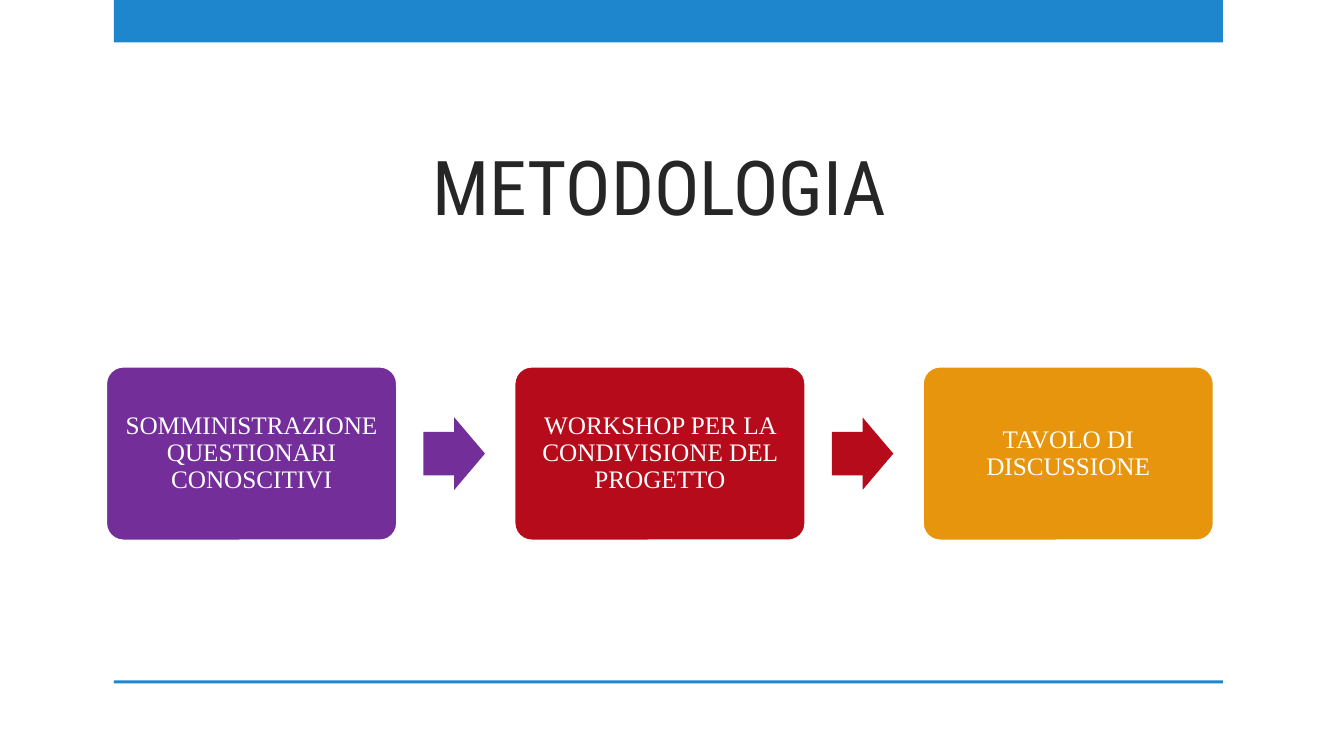
"""Build the METODOLOGIA slide: three process steps joined by block arrows."""
from dataclasses import dataclass

from pptx import Presentation
from pptx import util as u
from pptx.dml import color
from pptx.enum import shapes, text

COLOURS = {
    "blue": "1D86CD",
    "ink": "262626",
    "white": "FFFFFF",
    "purple": "732E9A",
    "red": "B50B1B",
    "orange": "E8950E",
}
SLIDE_WIDTH, SLIDE_HEIGHT = 13.33, 7.5
BAND_LEFT, CONTENT_WIDTH = 1.13, 11
STEP_LEFT, STEP_PITCH = 1.05, 4.05
STEP_WIDTH, STEP_HEIGHT = 2.89, 1.73
ARROW_OFFSET, ARROW_WIDTH, ARROW_HEIGHT = 3.15, 0.61, 0.72
ROW_MIDDLE = 4.5


@dataclass(frozen=True)
class Area:
    """A rectangle in inches."""

    left: float
    top: float
    width: float
    height: float

    def lengths(self) -> tuple:
        """Return left, top, width and height as slide lengths."""
        return tuple(u.Inches(n) for n in (self.left, self.top, self.width, self.height))


@dataclass(frozen=True)
class Step:
    """One stage of the method."""

    label: str
    colour: str


STEPS = (
    Step("SOMMINISTRAZIONE QUESTIONARI CONOSCITIVI", "purple"),
    Step("WORKSHOP PER LA CONDIVISIONE DEL PROGETTO", "red"),
    Step("TAVOLO DI DISCUSSIONE", "orange"),
)
BANDS = (
    Area(BAND_LEFT, 0, CONTENT_WIDTH, 0.42),
    Area(BAND_LEFT, 6.75, CONTENT_WIDTH, 0.03),
)
TITLE_AREA = Area(1.04, 1.27, CONTENT_WIDTH, 1.09)


def rgb(name: str) -> color.RGBColor:
    """Return a named colour of the slide."""
    return color.RGBColor.from_string(COLOURS[name])


def add_block(page, kind, area: Area, fill: str, adjustments=(), outline: str = ""):
    """Draw a filled preset shape, with a border if an outline colour is given."""
    block = page.shapes.add_shape(kind, *area.lengths())
    block.shadow.inherit = False
    block.fill.solid()
    block.fill.fore_color.rgb = rgb(fill)
    for index, value in enumerate(adjustments):
        block.adjustments[index] = value
    if outline:
        block.line.color.rgb = rgb(outline)
        block.line.width = u.Pt(1.75)
    else:
        block.line.fill.background()
    return block


def write(box, words: str, *, font: str, size: float, colour: str,
          anchor, inset: float, spacing: float = 1.0) -> None:
    """Put centred, wrapped text into a box."""
    frame = box.text_frame
    frame.word_wrap = True
    frame.vertical_anchor = anchor
    frame.margin_left = frame.margin_right = u.Inches(inset)
    frame.margin_top = frame.margin_bottom = u.Inches(0.07)
    para = frame.paragraphs[0]
    para.alignment = text.PP_ALIGN.CENTER
    para.line_spacing = spacing
    span = para.add_run()
    span.text = words
    span.font.name = font
    span.font.size = u.Pt(size)
    span.font.color.rgb = rgb(colour)


def add_step(page, step: Step, column: int) -> None:
    """Draw a step box and, unless it is the last, the arrow after it."""
    left = STEP_LEFT + column * STEP_PITCH
    area = Area(left, ROW_MIDDLE - STEP_HEIGHT / 2, STEP_WIDTH, STEP_HEIGHT)
    box = add_block(page, shapes.MSO_SHAPE.ROUNDED_RECTANGLE, area, step.colour,
                    (0.1,), outline="white")
    write(box, step.label, font="Times New Roman", size=18, colour="white",
          anchor=text.MSO_ANCHOR.MIDDLE, inset=0.07, spacing=0.9)
    if column < len(STEPS) - 1:
        area = Area(left + ARROW_OFFSET, ROW_MIDDLE - ARROW_HEIGHT / 2,
                    ARROW_WIDTH, ARROW_HEIGHT)
        add_block(page, shapes.MSO_SHAPE.RIGHT_ARROW, area, step.colour, (0.6, 0.5))


def main() -> None:
    """Create and save the deck."""
    deck = Presentation()
    deck.slide_width = u.Inches(SLIDE_WIDTH)
    deck.slide_height = u.Inches(SLIDE_HEIGHT)
    page = deck.slides.add_slide(deck.slide_layouts[6])
    for area in BANDS:
        add_block(page, shapes.MSO_SHAPE.RECTANGLE, area, "blue")
    title = page.shapes.add_textbox(*TITLE_AREA.lengths())
    write(title, "METODOLOGIA", font="Roboto Condensed", size=54, colour="ink",
          anchor=text.MSO_ANCHOR.BOTTOM, inset=0.1)
    for column, step in enumerate(STEPS):
        add_step(page, step, column)
    deck.save("out.pptx")


if __name__ == "__main__":
    main()
